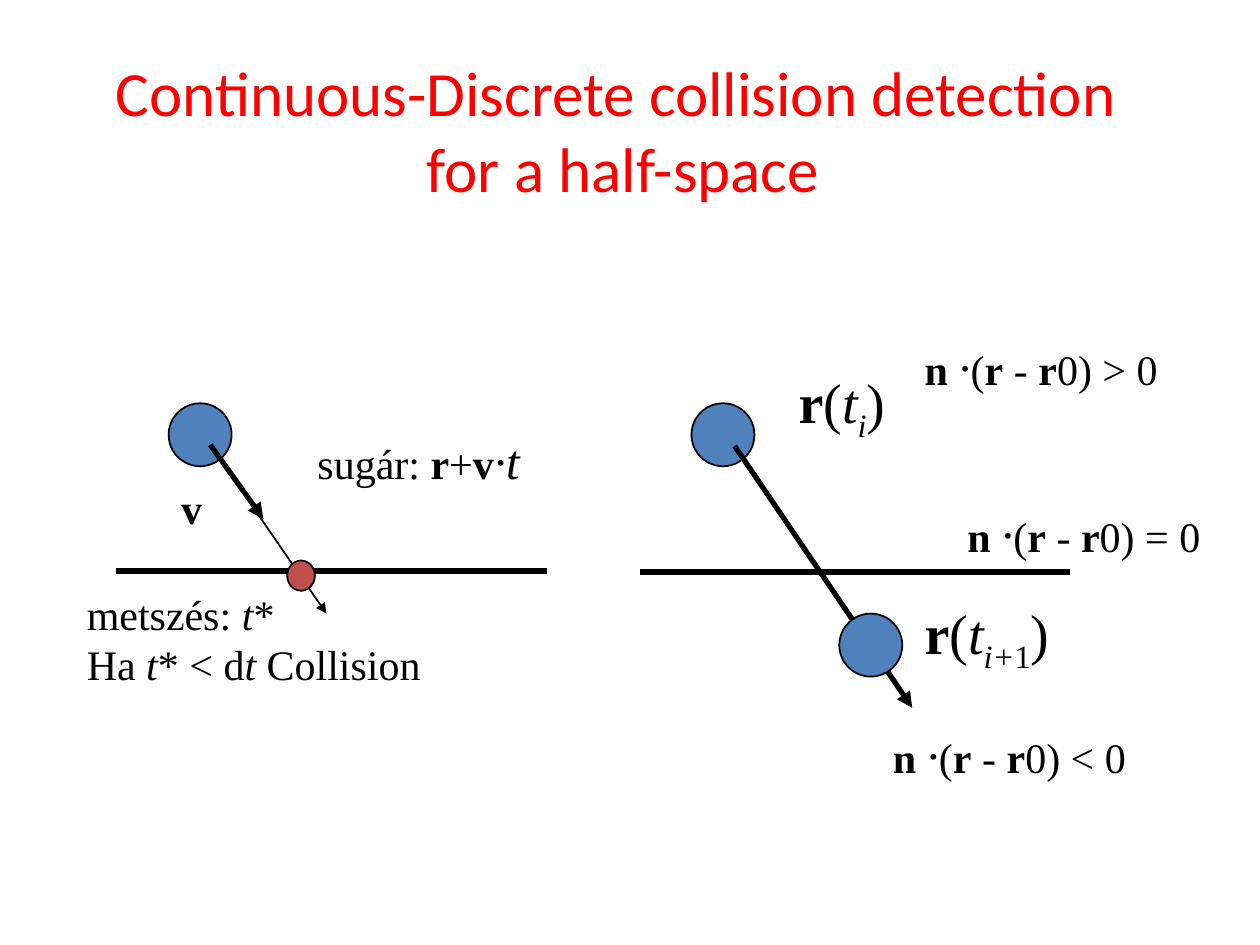
from lxml import etree
from pptx import Presentation
from pptx.dml.color import RGBColor
from pptx.enum import shapes, text
from pptx.oxml import ns
from pptx.util import Cm, Pt

BLACK, BLUE, RED, TITLE_RED = "000000", "4F81BD", "C0504D", "FF0000"
BALL = 1.27
START = (4.24, 8.97)


def color(value):
    return RGBColor.from_string(value)


def add_run(p, content, style="", size=24, font="Times New Roman", fill=BLACK):
    r = p.add_run()
    r.text = content
    r.font.name = font
    r.font.size = Pt(size)
    r.font.bold = "b" in style
    r.font.italic = "i" in style
    r.font.color.rgb = color(fill)
    if "_" in style:
        r._r.get_or_add_rPr().set("baseline", "-25000")


def add_title(s, lines):
    sp = s.shapes.title
    sp.left, sp.top, sp.width, sp.height = Cm(0.66), Cm(1.02), Cm(23.8), Cm(3.18)
    tf = sp.text_frame
    tf.vertical_anchor = text.MSO_ANCHOR.MIDDLE
    p = tf.paragraphs[0]
    p.alignment = text.PP_ALIGN.CENTER
    for i, line in enumerate(lines):
        if i:
            p.add_line_break()
        add_run(p, line, size=36, font="Calibri", fill=TITLE_RED)


def add_ball(s, x, y, width=BALL, height=BALL, fill=BLUE):
    sp = s.shapes.add_shape(shapes.MSO_SHAPE.OVAL, Cm(x), Cm(y), Cm(width), Cm(height))
    sp.shadow.inherit = False
    sp.fill.solid()
    sp.fill.fore_color.rgb = color(fill)
    sp.line.color.rgb = color(BLACK)
    sp.line.width = Pt(1)


def add_line(s, start, end, width=3, arrow=False):
    points = [Cm(v) for v in (*start, *end)]
    sp = s.shapes.add_connector(shapes.MSO_CONNECTOR.STRAIGHT, *points)
    sp.line.color.rgb = color(BLACK)
    sp.line.width = Pt(width)
    if arrow:
        etree.SubElement(sp.line._get_or_add_ln(), ns.qn("a:tailEnd"), type="triangle")
    etree.SubElement(sp._element.spPr, ns.qn("a:effectLst"))


def add_label(s, x, y, width, height, *paragraphs):
    sp = s.shapes.add_textbox(Cm(x), Cm(y), Cm(width), Cm(height))
    tf = sp.text_frame
    tf.word_wrap = False
    tf.auto_size = text.MSO_AUTO_SIZE.SHAPE_TO_FIT_TEXT
    for i, runs in enumerate(paragraphs):
        p = tf.add_paragraph() if i else tf.paragraphs[0]
        for run in runs:
            add_run(p, *run)


def add_position(s, x, y, width, *index):
    runs = [("r", "b", 32), ("(", "", 32), ("t", "i", 32), *index, (")", "", 32)]
    add_label(s, x, y, width, 1.6, runs)


def add_condition(s, x, y, relation):
    runs = [("n ", "b"), ("·", "i", 28), ("(",), ("r", "b"), (" - ",),
            ("r", "b"), (f"0) {relation} 0",)]
    add_label(s, x, y, 5.21, 1.45, runs)


def add_discrete_test(s):
    add_ball(s, 13.94, 8.13)
    add_line(s, (14.81, 8.99), (18.39, 14.27), arrow=True)
    add_line(s, (12.9, 11.53), (21.56, 11.53))
    add_position(s, 15.85, 7.29, 2.29, ("i", "i_", 32))
    add_position(s, 18.39, 11.94, 3.2, ("i+", "i_", 32), ("1", "_", 32))
    add_ball(s, 16.92, 12.37)
    add_condition(s, 19.25, 10.03, "=")
    add_condition(s, 18.39, 6.65, ">")
    add_condition(s, 17.75, 14.48, "<")


def add_continuous_test(s):
    add_ball(s, 3.4, 8.13)
    add_line(s, START, (5.31, 10.46), arrow=True)
    add_line(s, (2.34, 11.51), (11.02, 11.51))
    add_label(s, 3.4, 9.6, 0.94, 1.27, [("v", "b")])
    add_line(s, START, (6.58, 12.37), width=1, arrow=True)
    add_label(s, 6.15, 8.56, 4.6, 1.45,
              [("sugár: ",), ("r", "b"), ("+",), ("v", "b"), ("·t", "i", 28)])
    add_ball(s, 5.79, 11.3, 0.56, 0.61, RED)
    add_label(s, 1.5, 11.73, 7.32, 2.31,
              [("metszés: ",), ("t", "i"), ("*",)],
              [("Ha ",), ("t", "i"), ("* < d",), ("t", "i"), (" Collision",)])


def main():
    prs = Presentation()
    prs.slide_width, prs.slide_height = Cm(25.4), Cm(19.05)
    s = prs.slides.add_slide(prs.slide_layouts.get_by_name("Title Only"))
    add_title(s, ["Continuous-Discrete collision detection ", "for a half-space"])
    add_discrete_test(s)
    add_continuous_test(s)
    prs.save("out.pptx")


if __name__ == "__main__":
    main()
